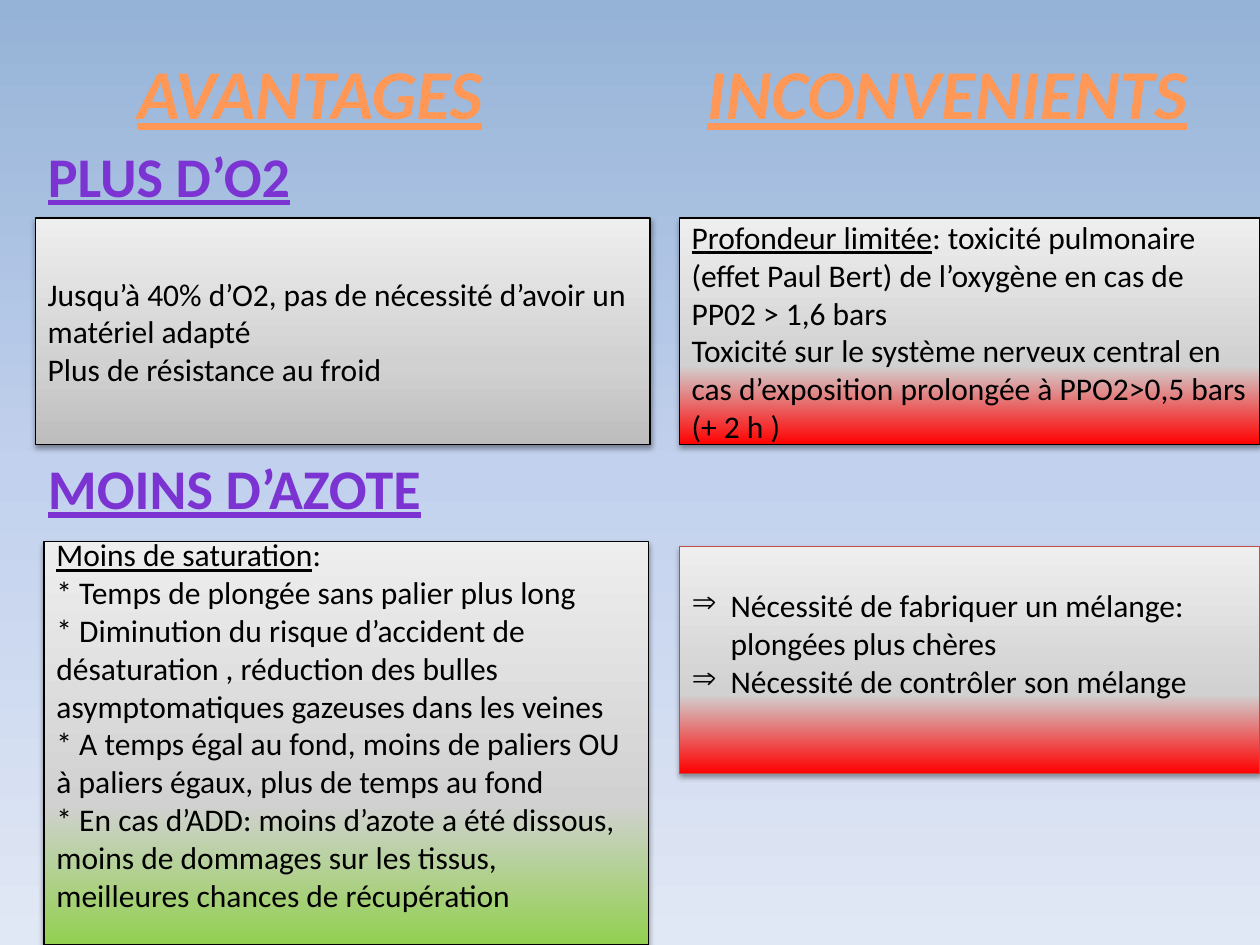
"""Build the slide on the advantages and drawbacks of oxygen-enriched diving gas."""
import copy

import pptx
import pptx.dml.color
import pptx.enum.shapes
import pptx.enum.text
import pptx.oxml
import pptx.oxml.ns
import pptx.util
from lxml import etree

COLORS = {
    "title": "FF9856", "heading": "7B34D2", "text": "000000", "border": "000000",
    "red_border": "BF4C48", "light": "EEEEEE", "middle": "D1D1D1", "grey": "BDBDBD",
    "red": "FF0000", "green": "92D050",
    "sky_top": "95B3D7", "sky_middle": "C2D1ED", "sky_bottom": "E1E8F5",
}
TITLE = "AVANTAGES\tINCONVENIENTS"
HEADINGS = ["PLUS D’O2", "MOINS D’AZOTE"]
FONT = "Calibri"
RIGHT_LEFT, RIGHT_WIDTH, CARD_HEIGHT = 5.39, 4.61, 1.8
FIRST_ROW = 1.73

CARDS = [
    {
        "at": (RIGHT_LEFT, 4.34, RIGHT_WIDTH, CARD_HEIGHT),
        "base": "red", "border": "red_border", "bottom": 0.32, "bullet": "⇒",
        "lines": [
            ("", "Nécessité de fabriquer un mélange: plongées plus chères"),
            ("", "Nécessité de contrôler son mélange"),
        ],
    },
    {
        "at": (RIGHT_LEFT, FIRST_ROW, RIGHT_WIDTH, CARD_HEIGHT),
        "base": "red",
        "lines": [
            ("Profondeur limitée", ": toxicité pulmonaire (effet Paul Bert) "
             "de l’oxygène en cas de PP02 > 1,6 bars"),
            ("", "Toxicité sur le système nerveux central en cas d’exposition "
             "prolongée à PPO2>0,5 bars (+ 2 h )"),
        ],
    },
    {
        "at": (0.35, 4.3, 4.8, 3.2),
        "base": "green", "bottom": 0.35,
        "lines": [
            ("Moins de saturation", ":"),
            ("", "* Temps de plongée sans palier plus long"),
            ("", "* Diminution du risque d’accident de désaturation , réduction "
             "des bulles asymptomatiques gazeuses dans les veines"),
            ("", "* A temps égal au fond, moins de paliers OU à paliers égaux, "
             "plus de temps au fond"),
            ("", "* En cas d’ADD: moins d’azote a été dissous, moins de dommages "
             "sur les tissus, meilleures chances de récupération"),
        ],
    },
    {
        "at": (0.28, FIRST_ROW, 4.88, CARD_HEIGHT),
        "base": "grey",
        "lines": [
            ("", "Jusqu’à 40% d’O2, pas de nécessité d’avoir un matériel adapté"),
            ("", "Plus de résistance au froid"),
        ],
    },
]


def rgb(name):
    return pptx.dml.color.RGBColor.from_string(COLORS[name])


def place(shape, at):
    shape.left, shape.top, shape.width, shape.height = map(pptx.util.Inches, at)


def add_child(parent, tag, **attributes):
    names = {key: str(value) for key, value in attributes.items()}
    return etree.SubElement(parent, pptx.oxml.ns.qn(tag), names)


def fill_downward(fill, element, stops):
    fill.gradient()
    fill.gradient_angle = 270
    stop_list = next(element.iter(pptx.oxml.ns.qn("a:gsLst")))
    stop_list.insert(1, copy.deepcopy(stop_list[0]))
    for stop, (position, name) in zip(fill.gradient_stops, stops):
        stop.position = position
        stop.color.rgb = rgb(name)


def style(span, size, color):
    span.font.name = FONT
    span.font.size = pptx.util.Pt(size)
    span.font.color.rgb = rgb(color)


def indent(para, left, first, bullet=None):
    properties = para._p.get_or_add_pPr()
    properties.set("marL", str(pptx.util.Inches(left)))
    properties.set("indent", str(pptx.util.Inches(first)))
    if bullet:
        add_child(properties, "a:buChar", char=bullet)
    else:
        add_child(properties, "a:buNone")


def add_shadow(shape):
    shape.shadow.inherit = False
    effects = shape.element.spPr.find(pptx.oxml.ns.qn("a:effectLst"))
    shadow = add_child(effects, "a:outerShdw", blurRad=pptx.util.Pt(3.1),
                       dist=pptx.util.Pt(1.6), dir=5400000, rotWithShape=0)
    color = add_child(shadow, "a:srgbClr", val=COLORS["border"])
    add_child(color, "a:alpha", val=38000)


def add_title(page):
    title = page.shapes.title
    place(title, (0.5, 0.3, 9.5, 0.85))
    frame = title.text_frame
    frame.text = TITLE
    frame.margin_left = pptx.util.Inches(0.59)
    frame.vertical_anchor = pptx.enum.text.MSO_ANCHOR.MIDDLE
    para = frame.paragraphs[0]
    para.alignment = pptx.enum.text.PP_ALIGN.LEFT
    tabs = add_child(para._p.get_or_add_pPr(), "a:tabLst")
    add_child(tabs, "a:tab", pos=pptx.util.Inches(4.52), algn="l")
    for span in para.runs:
        style(span, 40, "title")
        span.font.bold = span.font.italic = span.font.underline = True


def add_headings(page):
    body = page.placeholders[1]
    place(body, (0.28, 1.07, 9.37, 6.43))
    frame = body.text_frame
    frame.text = "\n".join(HEADINGS)
    frame.auto_size = pptx.enum.text.MSO_AUTO_SIZE.NONE
    for para, gap in zip(frame.paragraphs, (6.4, 140)):
        para.space_before = pptx.util.Pt(gap)
        indent(para, 0, 0)
        span = para.runs[0]
        style(span, 32, "heading")
        span.font.bold = span.font.underline = True


def add_card(page, card):
    box = page.shapes.add_shape(pptx.enum.shapes.MSO_SHAPE.RECTANGLE,
                                *map(pptx.util.Inches, card["at"]))
    fill_downward(box.fill, box.element,
                  [(0, "light"), (0.65, "middle"), (1, card["base"])])
    box.line.color.rgb = rgb(card.get("border", "border"))
    box.line.width = pptx.util.Pt(0.75)
    add_shadow(box)
    frame = box.text_frame
    frame.word_wrap = True
    frame.vertical_anchor = pptx.enum.text.MSO_ANCHOR.MIDDLE
    frame.margin_bottom = pptx.util.Inches(card.get("bottom", 0.05))
    for number, parts in enumerate(card["lines"]):
        para = frame.add_paragraph() if number else frame.paragraphs[0]
        para.alignment = pptx.enum.text.PP_ALIGN.LEFT
        if "bullet" in card:
            indent(para, 0.31, -0.31, card["bullet"])
        for text, underlined in zip(parts, (True, False)):
            if text:
                span = para.add_run()
                span.text = text
                style(span, 18, "text")
                span.font.underline = underlined


def main():
    deck = pptx.Presentation()
    deck.slide_width, deck.slide_height = map(pptx.util.Inches, (10, 7.5))
    page = deck.slides.add_slide(deck.slide_layouts[1])
    fill_downward(page.background.fill, page.element,
                  [(0, "sky_top"), (0.5, "sky_middle"), (1, "sky_bottom")])
    add_headings(page)
    add_title(page)
    for card in CARDS:
        add_card(page, card)
    deck.save("out.pptx")


if __name__ == "__main__":
    main()
